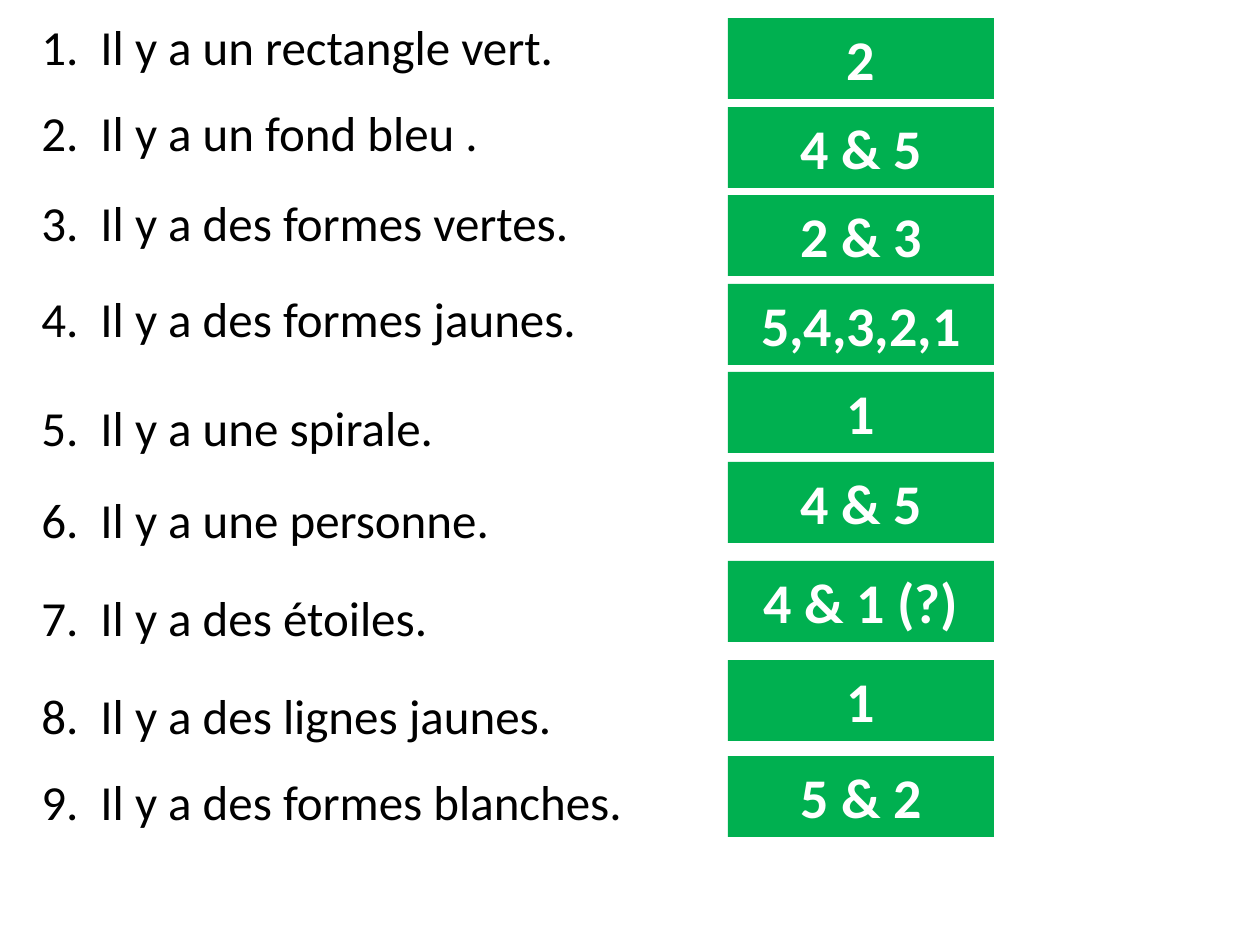
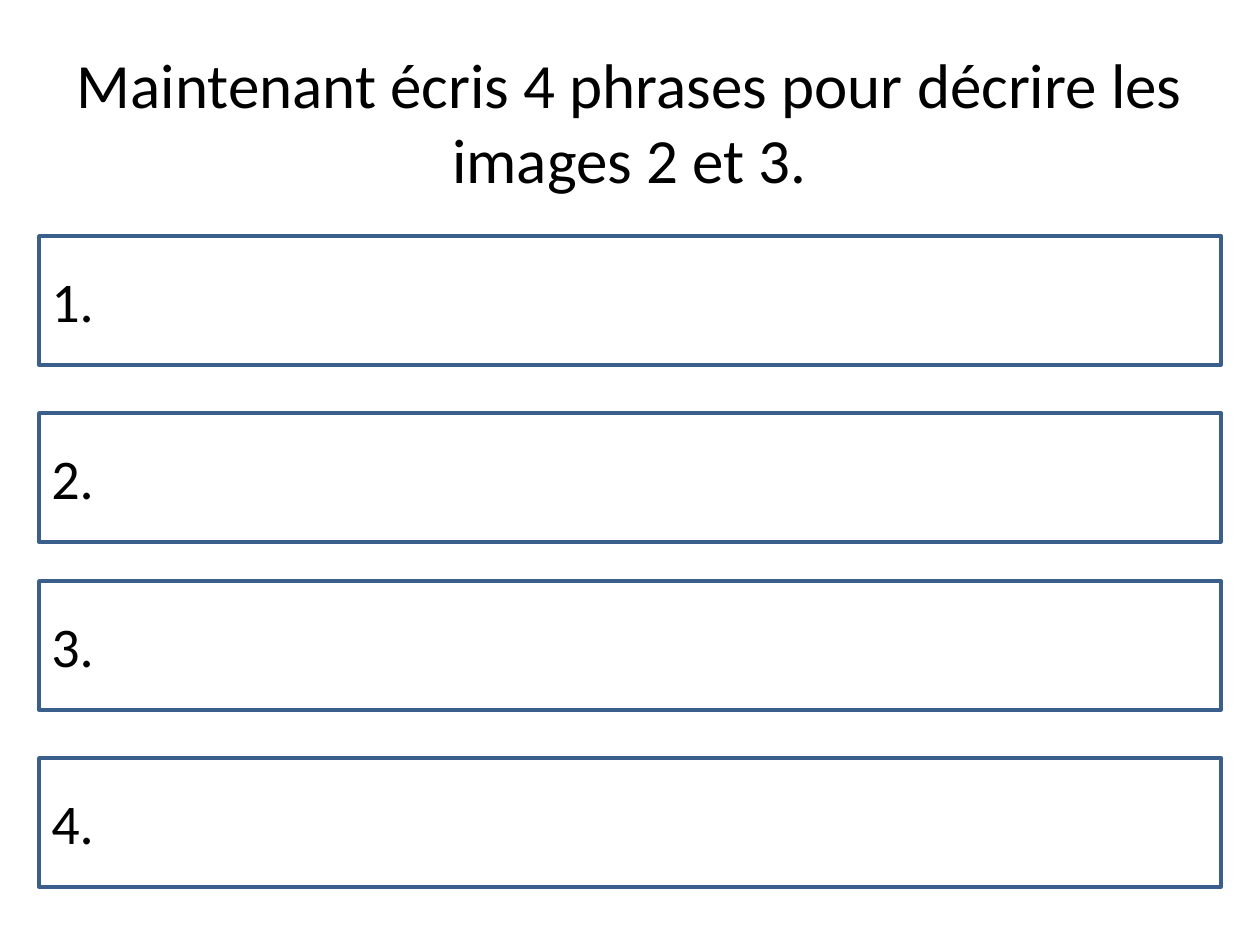
from lxml import etree
from pptx import Presentation
from pptx import util as u
from pptx.dml.color import RGBColor
from pptx.enum import shapes, text

# Shared scale and style
SCALE = 914400 / 126
FONT = "Calibri"
COLOURS = {"ink": "000000", "answer": "00B050", "answer_text": "FFFFFF",
           "outline": "3A5F8C"}
LEFT, WIDE = 29, 1201

# Sentence, its top, the matching answer, its top
QUESTIONS = [
    ("Il y a un rectangle vert.", 10, "2", 18),
    ("Il y a un fond bleu .", 96, "4 & 5", 107),
    ("Il y a des formes vertes.", 186, "2 & 3", 195),
    ("Il y a des formes jaunes.", 282, "5,4,3,2,1", 284),
    ("Il y a une spirale.", 391, "1", 372),
    ("Il y a une personne.", 483, "4 & 5", 462),
    ("Il y a des étoiles.", 581, "4 & 1 (?)", 561),
    ("Il y a des lignes jaunes.", 679, "1", 660),
    ("Il y a des formes blanches.", 765, "5 & 2", 756),
]
WRITING_TOPS = [236, 413, 581, 758]


def px(length):
    return u.Emu(round(length * SCALE))


def colour(name):
    return RGBColor.from_string(COLOURS[name])


def write(box, words, size, ink="ink", align=text.PP_ALIGN.LEFT,
          anchor=text.MSO_ANCHOR.TOP, bold=False):
    frame = box.text_frame
    frame.word_wrap = True
    frame.vertical_anchor = anchor
    para = frame.paragraphs[0]
    para.text = words
    para.alignment = align
    para.font.name = FONT
    para.font.size = u.Pt(size)
    para.font.bold = bold
    para.font.color.rgb = colour(ink)
    return para


def add_label(page, top, height, words, size, **style):
    box = page.shapes.add_textbox(px(LEFT), px(top), px(WIDE), px(height))
    return write(box, words, size, **style)


def add_sentence(page, top, number, sentence):
    para = add_label(page, top, 72, f"{number}.\t{sentence}", 28)
    # Hanging indent: the tab after the number stops at the margin
    properties = para._p.get_or_add_pPr()
    properties.set("marL", str(px(59)))
    properties.set("indent", str(-px(59)))


def add_box(page, left, top, width, height):
    box = page.shapes.add_shape(shapes.MSO_SHAPE.RECTANGLE,
                                px(left), px(top), px(width), px(height))
    box.shadow.inherit = False
    return box


def add_answer(page, top, words):
    box = add_box(page, 728, top, 266, 81)
    box.fill.solid()
    box.fill.fore_color.rgb = colour("answer")
    box.line.fill.background()
    write(box, words, 32, "answer_text", text.PP_ALIGN.CENTER, bold=True)


def add_writing_box(page, top, number):
    box = add_box(page, 39, top, 1182, 129)
    box.fill.background()
    box.line.color.rgb = colour("outline")
    box.line.width = u.Pt(2)
    write(box, f"{number}.", 32, anchor=text.MSO_ANCHOR.MIDDLE)


def main():
    deck = Presentation()
    deck.slide_width, deck.slide_height = px(1260), px(945)
    blank = deck.slide_layouts[6]

    # Sentences with their answers
    page = deck.slides.add_slide(blank)
    for number, (sentence, top, _, _) in enumerate(QUESTIONS, 1):
        add_sentence(page, top, number, sentence)
    for _, _, answer, top in QUESTIONS:
        add_answer(page, top, answer)

    # Writing task
    page = deck.slides.add_slide(blank)
    add_label(page, 39, 165,
              "Maintenant écris 4 phrases pour décrire les images 2 et 3.",
              36, align=text.PP_ALIGN.CENTER)
    for number, top in enumerate(WRITING_TOPS, 1):
        add_writing_box(page, top, number)

    deck.save("out.pptx")


if __name__ == "__main__":
    main()
